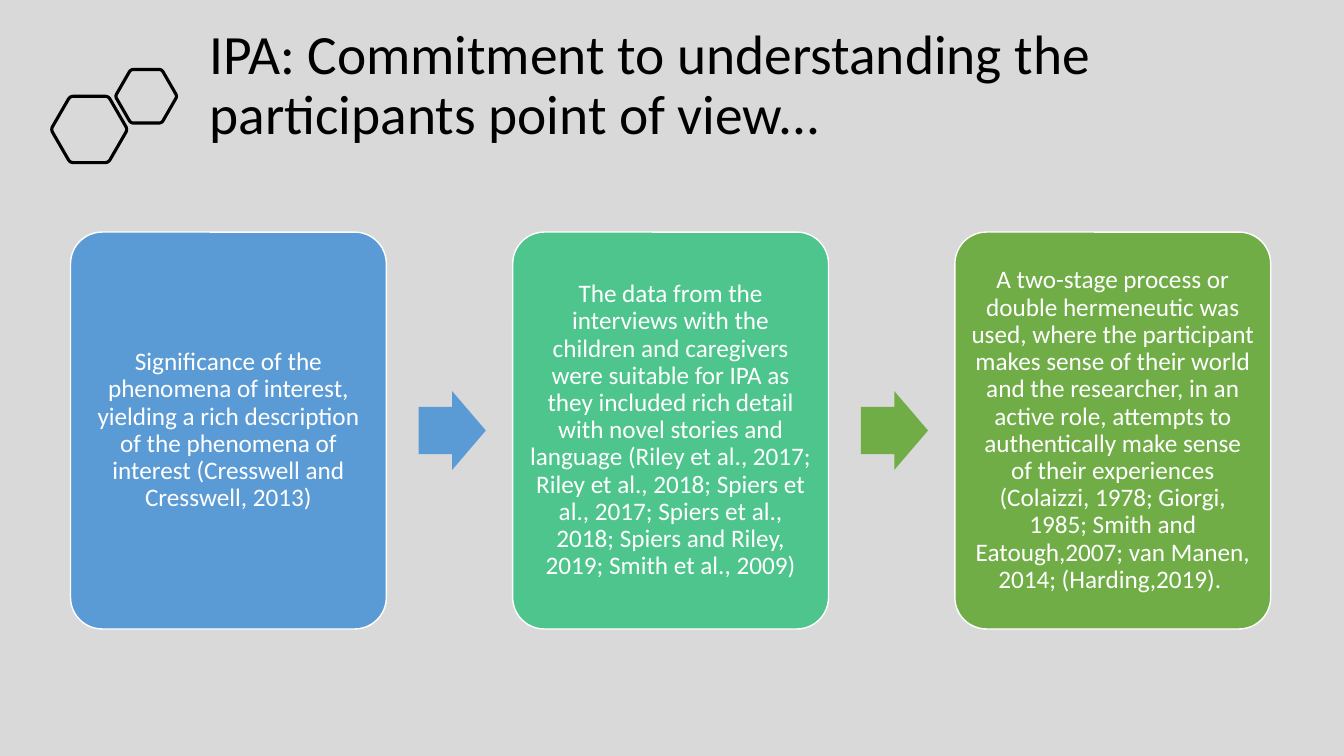
from dataclasses import dataclass
from math import cos, pi, sin

from pptx import Presentation
from pptx.dml.color import RGBColor
from pptx.enum.shapes import MSO_SHAPE
from pptx.enum.text import MSO_ANCHOR, MSO_AUTO_SIZE, PP_ALIGN
from pptx.presentation import Presentation as Deck
from pptx.shapes.autoshape import Shape
from pptx.slide import Slide
from pptx.util import Emu, Inches, Pt

ROUNDED, ARROW = MSO_SHAPE.ROUNDED_RECTANGLE, MSO_SHAPE.RIGHT_ARROW
LEFT, CENTER = PP_ALIGN.LEFT, PP_ALIGN.CENTER
MIDDLE = MSO_ANCHOR.MIDDLE
NO_FIT = MSO_AUTO_SIZE.NONE

GREY = RGBColor(0xD9, 0xD9, 0xD9)
BLACK = RGBColor(0x00, 0x00, 0x00)
WHITE = RGBColor(0xFF, 0xFF, 0xFF)
BLUE = RGBColor(0x5B, 0x9B, 0xD5)
TEAL = RGBColor(0x4D, 0xC5, 0x8D)
GREEN = RGBColor(0x70, 0xAD, 0x47)

FONT = "Calibri"
WIDTH, HEIGHT = Inches(13.333), Inches(7.5)
COL, ROW = WIDTH / 100, HEIGHT / 100  # a grid of 100 columns and 100 rows

CARD_LEFT, CARD_TOP, CARD_WIDTH, CARD_HEIGHT = 5.25, 30.7, 23.5, 52.5
CARD_PITCH = 32.9
ARROW_OFFSET, ARROW_WIDTH, ARROW_HEIGHT = 25.9, 5, 10.4
ARROW_TOP = CARD_TOP + (CARD_HEIGHT - ARROW_HEIGHT) / 2
CORNER_SHARE, CORNER_STEPS = 0.09, 6


@dataclass(frozen=True)
class Hexagon:
    col: float
    row: float
    radius: float  # in columns


@dataclass(frozen=True)
class Card:
    text: str
    fill: RGBColor


@dataclass(frozen=True)
class Arrow:
    after_card: int
    fill: RGBColor


TITLE = "IPA: Commitment to understanding the participants point of view..."
HEXAGONS = [Hexagon(6.64, 17.13, 2.85), Hexagon(10.88, 12.73, 2.3)]
CARDS = [
    Card("Significance of the phenomena of interest, yielding a rich description "
         "of the phenomena of interest (Cresswell and Cresswell, 2013)", BLUE),
    Card("The data from the interviews with the children and caregivers were "
         "suitable for IPA as they included rich detail with novel stories and "
         "language (Riley et al., 2017; Riley et al., 2018; Spiers et al., 2017; "
         "Spiers et al., 2018; Spiers and Riley, 2019; Smith et al., 2009)", TEAL),
    Card("A two-stage process or double hermeneutic was used, where the "
         "participant makes sense of their world and the researcher, in an active "
         "role, attempts to authentically make sense of their experiences "
         "(Colaizzi, 1978; Giorgi, 1985; Smith and Eatough,2007; van Manen, 2014; "
         "(Harding,2019). ", GREEN),
]
ARROWS = [Arrow(0, BLUE), Arrow(1, GREEN)]


def grid_box(col: float, row: float, cols: float, rows: float) -> tuple[Emu, ...]:
    """Turn grid units into left, top, width and height."""
    return Emu(int(col * COL)), Emu(int(row * ROW)), Emu(int(cols * COL)), Emu(int(rows * ROW))


def write(sp: Shape, text: str, *, size: float, color: RGBColor, align: PP_ALIGN,
          inset: float, bottom: float) -> None:
    """Set the text of a shape; insets are in inches."""
    tf = sp.text_frame
    tf.word_wrap = True
    tf.auto_size = NO_FIT
    tf.vertical_anchor = MIDDLE
    tf.margin_left = tf.margin_right = Inches(inset)
    tf.margin_top, tf.margin_bottom = Inches(inset / 2), Inches(bottom)
    p = tf.paragraphs[0]
    p.alignment = align
    p.line_spacing = 0.9
    p.space_before = Pt(0)
    r = p.add_run()
    r.text = text
    r.font.name, r.font.size, r.font.color.rgb = FONT, Pt(size), color


def add_title(s: Slide) -> None:
    title = s.shapes.title
    title.left, title.top, title.width, title.height = grid_box(14.85, 7.6, 81.1, 15.6)
    # The deep lower inset lifts the two lines towards the top edge.
    write(title, TITLE, size=39.6, color=BLACK, align=LEFT, inset=0.1, bottom=0.65)


def rounded_hexagon(hexagon: Hexagon) -> list[tuple[float, float]]:
    """Trace a regular hexagon whose corners are quadratic curves."""
    cx, cy, radius = hexagon.col * COL, hexagon.row * ROW, hexagon.radius * COL
    corners = [(cx + radius * cos(i * pi / 3), cy + radius * sin(i * pi / 3)) for i in range(6)]
    points = []
    for i, corner in enumerate(corners):
        before, after = corners[i - 1], corners[(i + 1) % 6]
        for step in range(CORNER_STEPS + 1):
            t = step / CORNER_STEPS
            to_before, to_after = CORNER_SHARE * (1 - t) ** 2, CORNER_SHARE * t ** 2
            points.append(tuple(c + to_before * (b - c) + to_after * (a - c)
                                for b, c, a in zip(before, corner, after)))
    return points


def add_hexagon(s: Slide, hexagon: Hexagon) -> None:
    start, *rest = rounded_hexagon(hexagon)
    builder = s.shapes.build_freeform(*start)
    builder.add_line_segments(rest, close=True)
    sp = builder.convert_to_shape()
    sp.shadow.inherit = False
    sp.fill.background()
    sp.line.color.rgb, sp.line.width = BLACK, Pt(2.25)


def add_filled(s: Slide, preset: MSO_SHAPE, box: tuple[Emu, ...], fill: RGBColor,
               adjustments: tuple[float, ...]) -> Shape:
    sp = s.shapes.add_shape(preset, *box)
    sp.shadow.inherit = False
    sp.fill.solid()
    sp.fill.fore_color.rgb = fill
    sp.line.fill.background()
    for i, value in enumerate(adjustments):
        sp.adjustments[i] = value
    return sp


def add_card(s: Slide, index: int, card: Card) -> None:
    box = grid_box(CARD_LEFT + index * CARD_PITCH, CARD_TOP, CARD_WIDTH, CARD_HEIGHT)
    sp = add_filled(s, ROUNDED, box, card.fill, (0.1,))
    sp.line.color.rgb, sp.line.width = WHITE, Pt(1)
    write(sp, card.text, size=18, color=WHITE, align=CENTER, inset=0.07, bottom=0.035)


def add_arrow(s: Slide, arrow: Arrow) -> None:
    col = CARD_LEFT + arrow.after_card * CARD_PITCH + ARROW_OFFSET
    box = grid_box(col, ARROW_TOP, ARROW_WIDTH, ARROW_HEIGHT)
    add_filled(s, ARROW, box, arrow.fill, (0.6, 0.5))


def build() -> Deck:
    prs = Presentation()
    prs.slide_width, prs.slide_height = WIDTH, HEIGHT
    s = prs.slides.add_slide(prs.slide_layouts.get_by_name("Title Only"))
    s.background.fill.solid()
    s.background.fill.fore_color.rgb = GREY
    add_title(s)
    for hexagon in HEXAGONS:
        add_hexagon(s, hexagon)
    for index, card in enumerate(CARDS):
        add_card(s, index, card)
    for arrow in ARROWS:
        add_arrow(s, arrow)
    return prs


if __name__ == "__main__":
    build().save("out.pptx")
